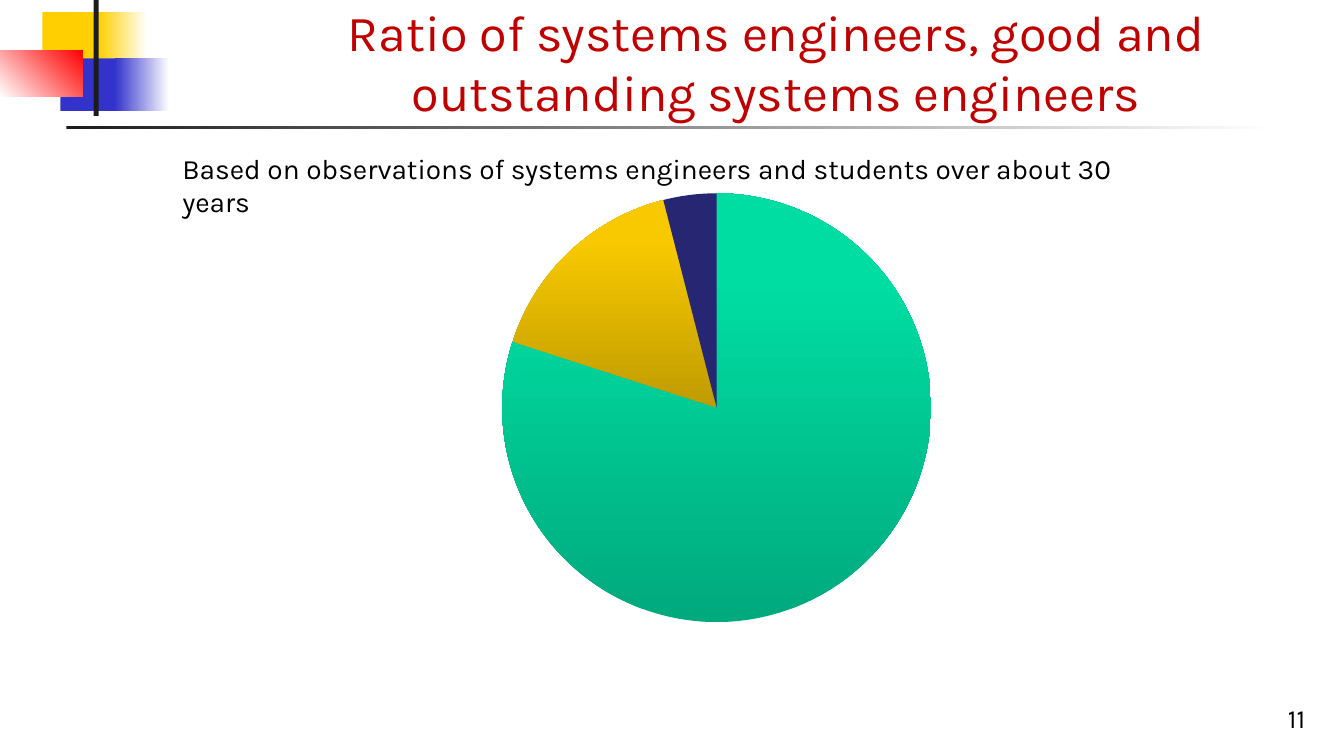
import copy
from dataclasses import dataclass

import pptx
import pptx.chart.data
import pptx.dml.color
import pptx.enum.chart
import pptx.enum.shapes
import pptx.enum.text
import pptx.util

Pt = pptx.util.Pt
Align = pptx.enum.text.PP_ALIGN
Anchor = pptx.enum.text.MSO_ANCHOR


@dataclass(frozen=True)
class Theme:
    font: str = "Karla"
    white: str = "FFFFFF"
    black: str = "000000"
    ink: str = "1C1C1C"
    gold: str = "FFCF01"
    blue: str = "3333CC"
    red: str = "FF0000"
    title: str = "C00000"
    green_pie: tuple = ((0, "00AA7D"), (80, "00DDA3"), (100, "00DEA4"))
    gold_pie: tuple = ((0, "BF9B00"), (80, "F8C900"), (100, "F9CA00"))
    navy: str = "262673"
    head: float = 36
    body: float = 20
    page: float = 18.7
    label: float = 28


T = Theme()


def rgb(code):
    return pptx.dml.color.RGBColor.from_string(code)


def shade(fill, root, stops, angle):
    """Apply a gradient; angle runs counter-clockwise."""
    fill.gradient()
    fill.gradient_angle = angle
    items = root.xpath(".//a:gsLst")[-1]
    while len(items) < len(stops):
        items.append(copy.deepcopy(items[-1]))
    for stop, (place, code) in zip(fill.gradient_stops, stops):
        stop.position = place / 100
        stop.color.rgb = rgb(code)


def block(slide, box, first, last=None, angle=0):
    """Draw a plain block, or a fading one when last is given."""
    shape = slide.shapes.add_shape(
        pptx.enum.shapes.MSO_SHAPE.RECTANGLE, *map(Pt, box))
    shape.shadow.inherit = False
    shape.line.fill.background()
    if last:
        shade(shape.fill, shape.element, ((0, first), (100, last)), angle)
    else:
        shape.fill.solid()
        shape.fill.fore_color.rgb = rgb(first)


def label(slide, box, text, size, color, align=Align.LEFT, anchor=Anchor.TOP):
    frame = slide.shapes.add_textbox(*map(Pt, box)).text_frame
    frame.word_wrap = True
    frame.vertical_anchor = anchor
    para = frame.paragraphs[0]
    para.alignment = align
    run = para.add_run()
    run.text = text
    run.font.name = T.font
    run.font.size = Pt(size)
    run.font.color.rgb = rgb(color)


def pie(slide, box):
    data = pptx.chart.data.CategoryChartData()
    data.categories = ["1", "2", "3"]
    data.add_series("Series 1", (80, 16, 4))
    chart = slide.shapes.add_chart(
        pptx.enum.chart.XL_CHART_TYPE.PIE, *map(Pt, box), data).chart
    chart.has_legend = False
    chart.has_title = False
    chart.font.name = T.font
    chart.font.size = Pt(T.label)
    chart.font.color.rgb = rgb(T.black)
    plot = chart.plots[0]
    plot.vary_by_categories = True
    for i, tone in enumerate((T.green_pie, T.gold_pie, T.navy)):
        form = plot.series[0].points[i].format
        form.line.fill.background()
        if isinstance(tone, str):
            form.fill.solid()
            form.fill.fore_color.rgb = rgb(tone)
        else:
            shade(form.fill, chart.element, tone, 90)


def main():
    deck = pptx.Presentation()
    deck.slide_width, deck.slide_height = Pt(960), Pt(540)
    slide = deck.slides.add_slide(deck.slide_layouts[6])

    # Corner blocks and rules
    block(slide, (30.24, 8.64, 46, 37.44), T.gold)
    block(slide, (70.56, 8.64, 34.56, 37.44), T.gold, T.white)
    block(slide, (43.2, 41.76, 44.64, 37.44), T.blue)
    block(slide, (82, 41.76, 38.88, 37.44), T.blue, T.white)
    block(slide, (0, 36, 59, 33.12), T.white, T.red, 45)
    block(slide, (66.96, 0, 3.6, 82.8), T.ink)
    block(slide, (47.52, 90, 864, 2.16), T.ink, T.white)

    # Title
    label(slide, (149, 24.48, 811, 66.24),
          "Ratio of systems engineers, good and outstanding systems engineers",
          T.head, T.title, Align.CENTER, Anchor.BOTTOM)

    # Pie, page number and note
    pie(slide, (97.92, 128.16, 828, 326.16))
    label(slide, (739.44, 491.76, 200, 36), "11", T.page, T.black,
          Align.RIGHT, Anchor.BOTTOM)
    label(slide, (123.12, 104.4, 714.24, 31.68),
          "Based on observations of systems engineers and students "
          "over about 30 years", T.body, T.black)

    deck.save("out.pptx")


if __name__ == "__main__":
    main()
